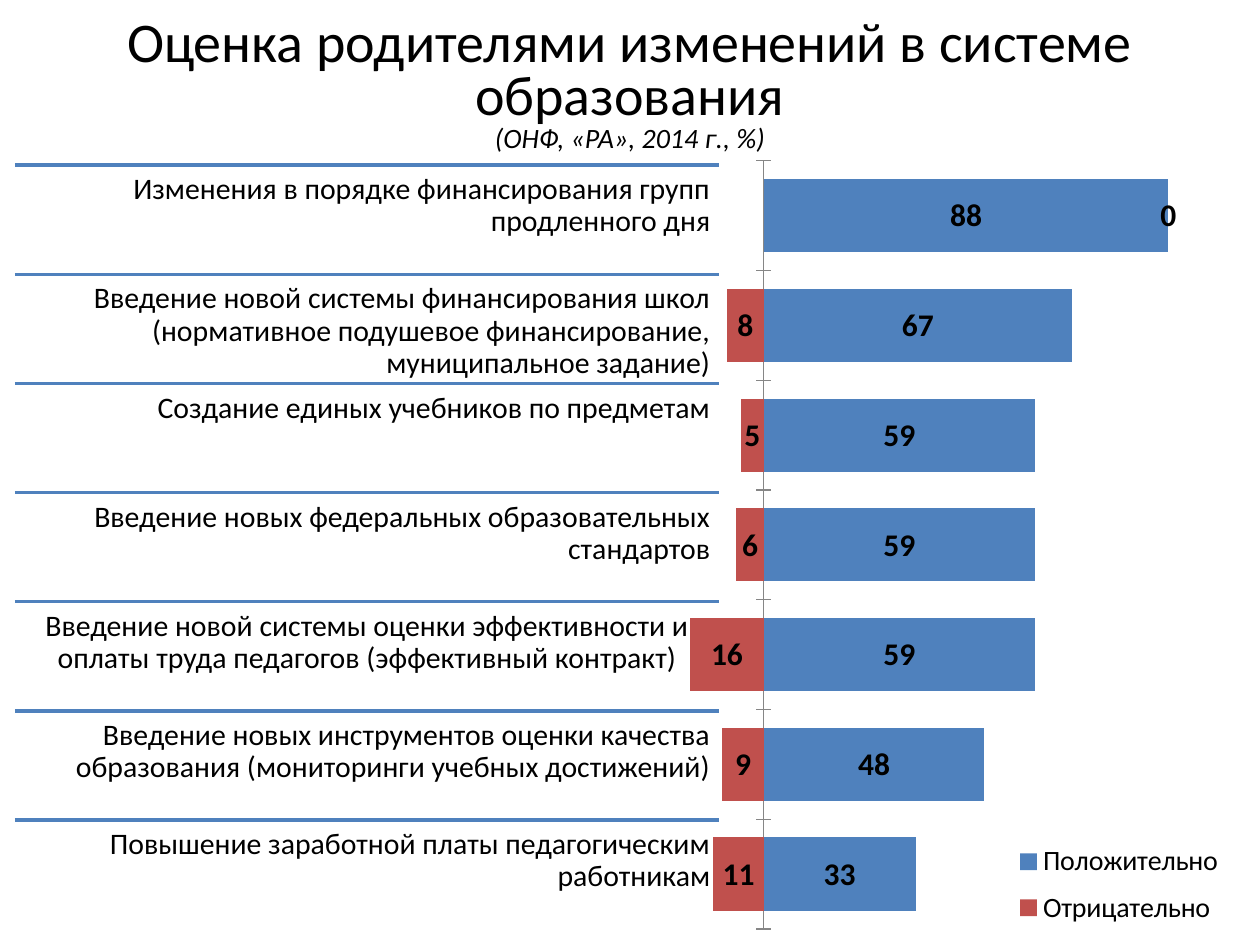
from lxml.etree import SubElement
from pptx import Presentation
from pptx.chart.data import CategoryChartData
from pptx.dml.color import RGBColor
from pptx.enum.chart import XL_CHART_TYPE as ChartType, XL_LABEL_POSITION as LabelPosition
from pptx.enum.chart import XL_LEGEND_POSITION as LegendPosition, XL_TICK_LABEL_POSITION as TickLabel
from pptx.enum.chart import XL_TICK_MARK as TickMark
from pptx.enum.shapes import MSO_CONNECTOR as Connector
from pptx.enum.text import MSO_ANCHOR as Anchor, PP_ALIGN as Align
from pptx.oxml.ns import qn
from pptx.util import Cm, Pt

BLACK = RGBColor(0, 0, 0)
BLUE = RGBColor(0x4F, 0x81, 0xBD)
RED = RGBColor(0xC0, 0x50, 0x4D)
GRAY = RGBColor(0x86, 0x86, 0x86)
FONT = "Calibri"

TITLE = [
    ("Оценка родителями изменений в системе образования", 32, False),
    ("(ОНФ, «РА», 2014 г., %)", 16, True),
]
QUESTIONS = [
    ("Изменения в порядке финансирования групп продленного дня", 88, 0, Align.RIGHT),
    ("Введение новой системы финансирования школ (нормативное подушевое "
     "финансирование, муниципальное задание)", 67, -8, Align.RIGHT),
    ("Создание единых учебников по предметам", 59, -5, Align.RIGHT),
    ("Введение новых федеральных образовательных стандартов", 59, -6, Align.RIGHT),
    ("Введение новой системы оценки эффективности и оплаты труда педагогов "
     "(эффективный контракт)", 59, -16, Align.CENTER),
    ("Введение новых инструментов оценки качества образования "
     "(мониторинги учебных достижений)", 48, -9, Align.RIGHT),
    ("Повышение заработной платы педагогическим работникам", 33, -11, Align.RIGHT),
]
SERIES_COLORS = [BLUE, RED]
LIST_LEFT, LIST_TOP, LIST_WIDTH, ROW_HEIGHT = 0.3, 3.33, 14.2, 2.2
PLOT_AREA = {"x": 0.02, "y": 0.02, "w": 0.95, "h": 0.96}
LEGEND_AREA = {"x": 0.6, "y": 0.86, "w": 0.38, "h": 0.13}


def add_text(page, lines, left, top, width, height, align=Align.RIGHT,
             anchor=Anchor.TOP, spacing=0.9, inset=0.18):
    box = page.shapes.add_textbox(Cm(left), Cm(top), Cm(width), Cm(height))
    frame = box.text_frame
    frame.word_wrap = True
    frame.vertical_anchor = anchor
    frame.margin_left = frame.margin_right = Cm(inset)
    frame.margin_top = frame.margin_bottom = Cm(0.18)
    para = frame.paragraphs[0]
    para.alignment = align
    para.line_spacing = spacing
    for index, (text, size, italic) in enumerate(lines):
        if index:
            para.add_line_break()
        span = para.add_run()
        span.text = text
        span.font.name = FONT
        span.font.size = Pt(size)
        span.font.italic = italic
        span.font.color.rgb = BLACK


def add_rule(page, left, top, width):
    rule = page.shapes.add_connector(
        Connector.STRAIGHT, Cm(left), Cm(top), Cm(left + width), Cm(top))
    rule.line.color.rgb = BLUE
    rule.line.width = Pt(2)
    SubElement(rule.element.spPr, qn("a:effectLst"))


def place_part(chart, tag, position, area, inner=False):
    part = chart.element.find(".//" + qn(tag))
    old = part.find(qn("c:layout"))
    if old is not None:
        part.remove(old)
    layout = SubElement(part, qn("c:layout"))
    part.insert(position, layout)
    manual = SubElement(layout, qn("c:manualLayout"))
    if inner:
        SubElement(manual, qn("c:layoutTarget")).set("val", "inner")
    for key in "xy":
        SubElement(manual, qn(f"c:{key}Mode")).set("val", "edge")
    for key, value in area.items():
        SubElement(manual, qn(f"c:{key}")).set("val", str(value))


def set_font(font, size, bold=False):
    font.name = FONT
    font.size = Pt(size)
    font.bold = bold
    font.color.rgb = BLACK


def add_opinion_chart(page):
    rows = QUESTIONS[::-1]
    data = CategoryChartData(number_format="0")
    data.categories = [str(number) for number in range(1, len(rows) + 1)]
    data.add_series("Положительно", [row[1] for row in rows])
    data.add_series("Отрицательно", [row[2] for row in rows])
    chart = page.shapes.add_chart(
        ChartType.BAR_STACKED, Cm(13.31), Cm(2.92), Cm(11.71), Cm(16.13), data).chart
    set_font(chart.font, 10)
    chart.has_title = False

    chart.has_legend = True
    chart.legend.position = LegendPosition.RIGHT
    chart.legend.include_in_layout = True
    set_font(chart.legend.font, 16)

    chart.category_axis.tick_label_position = TickLabel.NONE
    chart.category_axis.major_tick_mark = TickMark.CROSS
    chart.category_axis.minor_tick_mark = TickMark.NONE
    chart.category_axis.format.line.color.rgb = GRAY
    chart.category_axis.format.line.width = Pt(0.75)
    chart.value_axis.visible = False
    chart.value_axis.has_major_gridlines = False
    chart.value_axis.minimum_scale = -20
    chart.value_axis.maximum_scale = 100

    plot = chart.plots[0]
    plot.gap_width = 50
    plot.overlap = 100
    plot.vary_by_categories = False
    for series, color in zip(plot.series, SERIES_COLORS):
        series.invert_if_negative = False
        series.format.fill.solid()
        series.format.fill.fore_color.rgb = color
        labels = series.data_labels
        labels.show_value = True
        labels.position = LabelPosition.CENTER
        labels.number_format = "0;0"
        labels.number_format_is_linked = False
        set_font(labels.font, 18, bold=True)

    place_part(chart, "c:plotArea", 0, PLOT_AREA, inner=True)
    place_part(chart, "c:legend", 1, LEGEND_AREA)


def main():
    deck = Presentation()
    deck.slide_width, deck.slide_height = Cm(25.4), Cm(19.05)
    page = deck.slides.add_slide(deck.slide_layouts[6])
    add_text(page, TITLE, 1.27, 0.15, 22.86, 3.18, align=Align.CENTER,
             anchor=Anchor.MIDDLE, spacing=0.8, inset=0.25)
    for index, (question, _, _, align) in enumerate(QUESTIONS):
        top = LIST_TOP + index * ROW_HEIGHT
        add_rule(page, LIST_LEFT, top, LIST_WIDTH)
        add_text(page, [(question, 17, False)], LIST_LEFT, top, LIST_WIDTH,
                 ROW_HEIGHT, align=align)
    add_opinion_chart(page)
    deck.save("out.pptx")


if __name__ == "__main__":
    main()
